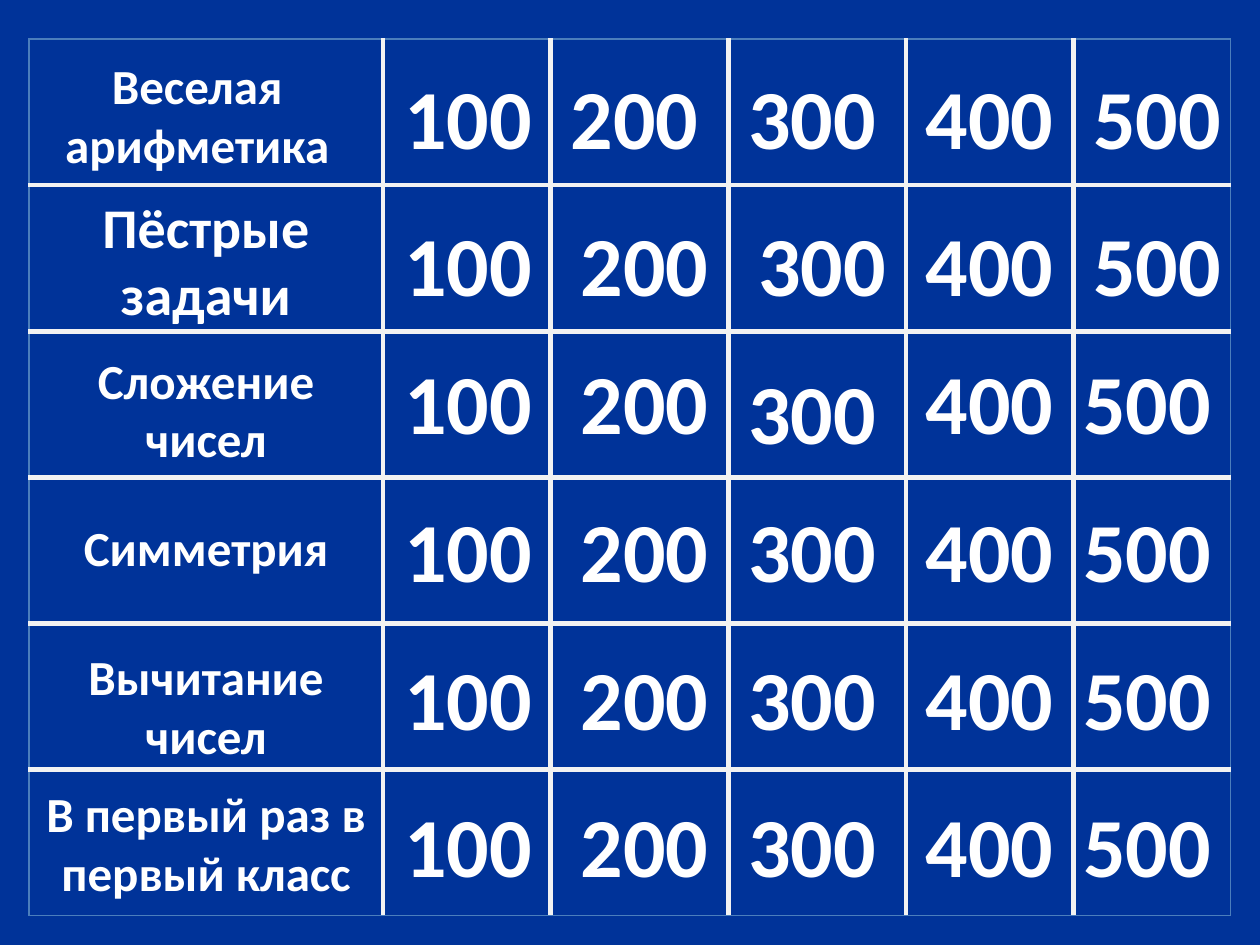
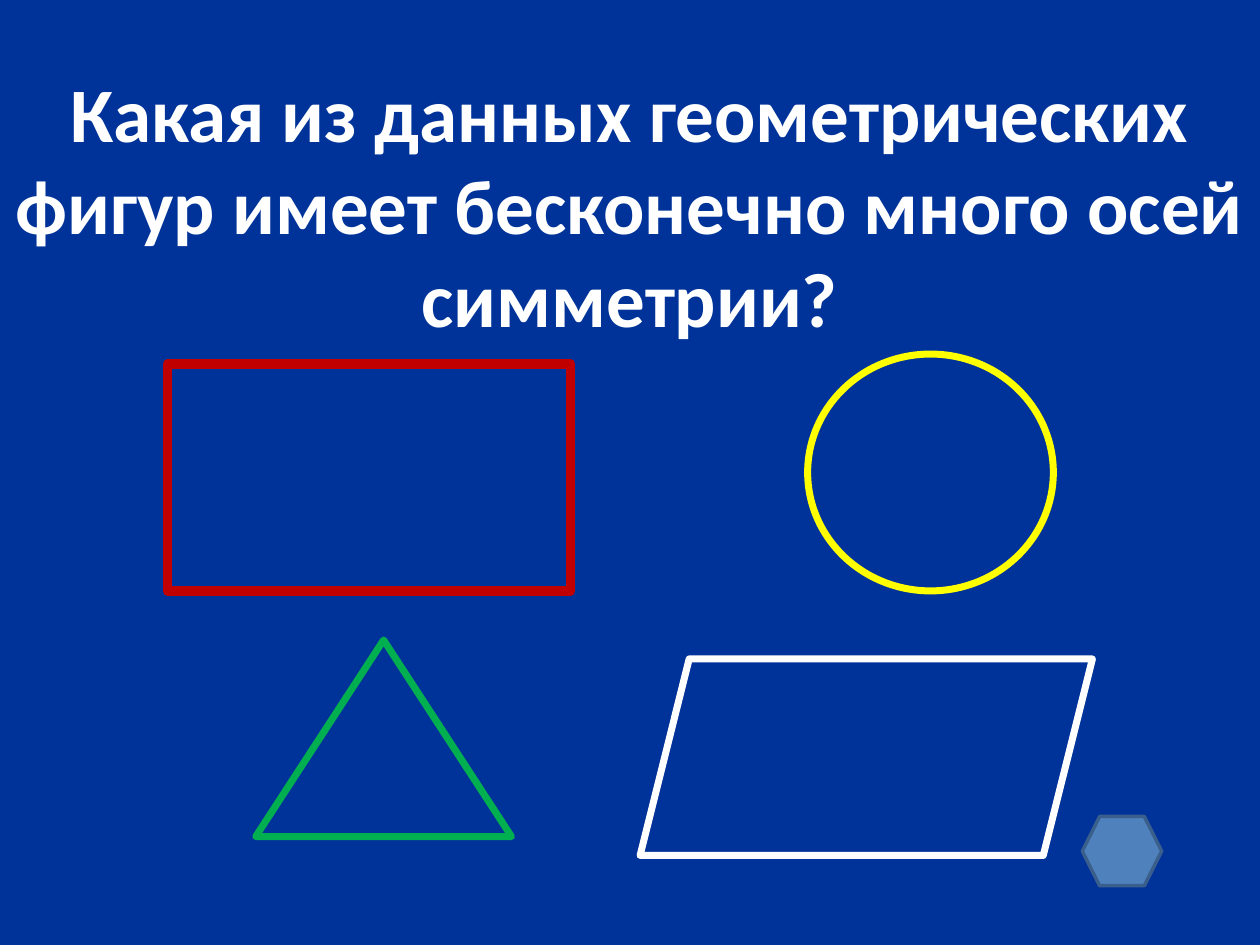
from lxml import etree
from pptx import Presentation
from pptx.dml.color import RGBColor
from pptx.enum.shapes import MSO_SHAPE
from pptx.enum.text import MSO_AUTO_SIZE, PP_ALIGN
from pptx.oxml.ns import qn
from pptx.util import Inches, Pt

RECTANGLE = MSO_SHAPE.RECTANGLE
OVAL = MSO_SHAPE.OVAL
TRIANGLE = MSO_SHAPE.ISOSCELES_TRIANGLE
PARALLELOGRAM = MSO_SHAPE.PARALLELOGRAM
HEXAGON = MSO_SHAPE.HEXAGON
CENTER = PP_ALIGN.CENTER
FIT_SHAPE = MSO_AUTO_SIZE.SHAPE_TO_FIT_TEXT

COLORS = {
    "background": "003399",
    "text": "FFFFFF",
    "grid": "F2F2F2",
    "frame": "4B7EBC",
    "red": "C00000",
    "yellow": "FFFF00",
    "green": "00B050",
    "button": "4F81BD",
    "button_edge": "3A5F8C",
}
FONT = "Calibri"
GRID_WIDTH = 3
FRAME_WIDTH = 0.75


def rgb(name):
    return RGBColor.from_string(COLORS[name])


class Quiz:
    def __init__(self):
        self.deck = Presentation()
        self.deck.slide_width = Inches(10)
        self.deck.slide_height = Inches(7.5)
        self.slide = None

    def new_slide(self):
        self.slide = self.deck.slides.add_slide(self.deck.slide_layouts[6])
        fill = self.slide.background.fill
        fill.solid()
        fill.fore_color.rgb = rgb("background")

    def text(self, wording, left, top, width, height, size):
        frame = self.slide.shapes.add_textbox(
            Inches(left), Inches(top), Inches(width), Inches(height)).text_frame
        frame.word_wrap = True
        frame.auto_size = FIT_SHAPE
        paragraph = frame.paragraphs[0]
        paragraph.text = wording
        paragraph.alignment = CENTER
        font = paragraph.font
        font.name, font.size, font.bold = FONT, Pt(size), True
        font.color.rgb = rgb("text")

    def figure(self, preset, left, top, width, height, edge, weight, fill=None):
        shape = self.slide.shapes.add_shape(
            preset, Inches(left), Inches(top), Inches(width), Inches(height))
        shape.shadow.inherit = False
        if fill:
            shape.fill.solid()
            shape.fill.fore_color.rgb = rgb(fill)
        else:
            shape.fill.background()
        shape.line.color.rgb = rgb(edge)
        shape.line.width = Pt(weight)

    def border(self, cell, side, outer):
        color, weight = ("frame", FRAME_WIDTH) if outer else ("grid", GRID_WIDTH)
        line = etree.SubElement(
            cell._tc.get_or_add_tcPr(), qn(f"a:ln{side}"), w=str(Pt(weight)))
        solid = etree.SubElement(line, qn("a:solidFill"))
        etree.SubElement(solid, qn("a:srgbClr"), val=COLORS[color])

    def board(self, left, top, widths, row_height, row_count):
        table = self.slide.shapes.add_table(
            row_count, len(widths), Inches(left), Inches(top),
            Inches(sum(widths)), Inches(row_height * row_count)).table
        table.first_row = table.horz_banding = False
        for column, width in zip(table.columns, widths):
            column.width = Inches(width)
        for r, row in enumerate(table.rows):
            row.height = Inches(row_height)
            for c, cell in enumerate(row.cells):
                self.border(cell, "L", c == 0)
                self.border(cell, "R", c == len(widths) - 1)
                self.border(cell, "T", r == 0)
                self.border(cell, "B", r == row_count - 1)
                cell.fill.solid()
                cell.fill.fore_color.rgb = rgb("background")


def score_board(quiz):
    quiz.new_slide()
    topics = [
        ("Веселая арифметика", 0.16, 0.39, 1.04, 28),
        ("Пёстрые задачи", 0.23, 1.48, 1.18, 32),
        ("Сложение чисел", 0.23, 2.73, 1.04, 28),
        ("Симметрия", 0.23, 4.06, 0.57, 28),
        ("Вычитание чисел", 0.23, 5.08, 1.04, 28),
        ("В первый раз в первый класс", 0.23, 6.17, 1.04, 28),
    ]
    quiz.board(0.23, 0.31, [2.81, 1.33, 1.41, 1.41, 1.33, 1.25], 1.16, len(topics))

    score_lefts = {100: 3.05, 200: 4.45, 300: 5.78, 400: 7.19, 500: 8.44}
    score_tops = [0.47, 1.64, 2.73, 3.91, 5.08, 6.25]
    nudge = 0.08
    nudges = {
        (200, 0): (-nudge, 0),
        (300, 1): (nudge, 0),
        (300, 2): (0, nudge),
        (500, 0): (nudge, 0),
        (500, 1): (nudge, 0),
    }
    for score, left in score_lefts.items():
        for row, top in enumerate(score_tops):
            dx, dy = nudges.get((score, row), (0, 0))
            quiz.text(str(score), left + dx, top + dy, 1.33, 0.91, 48)
    for topic, left, top, height, size in topics:
        quiz.text(topic, left, top, 2.81, height, size)


def symmetry_question(quiz):
    quiz.new_slide()
    quiz.text("Какая из данных геометрических фигур имеет бесконечно много осей симметрии?",
              0, 0.47, 10, 2.32, 44)
    quiz.figure(RECTANGLE, 1.33, 2.89, 3.2, 1.8, "red", 5.5)
    quiz.figure(OVAL, 6.41, 2.81, 1.95, 1.88, "yellow", 4)
    quiz.figure(TRIANGLE, 2.03, 5.08, 2.03, 1.56, "green", 4)
    quiz.figure(PARALLELOGRAM, 5.08, 5.23, 3.59, 1.56, "text", 4)
    quiz.figure(HEXAGON, 8.59, 6.48, 0.63, 0.55, "button_edge", 2, "button")


def main():
    quiz = Quiz()
    score_board(quiz)
    symmetry_question(quiz)
    quiz.deck.save("out.pptx")


if __name__ == "__main__":
    main()
